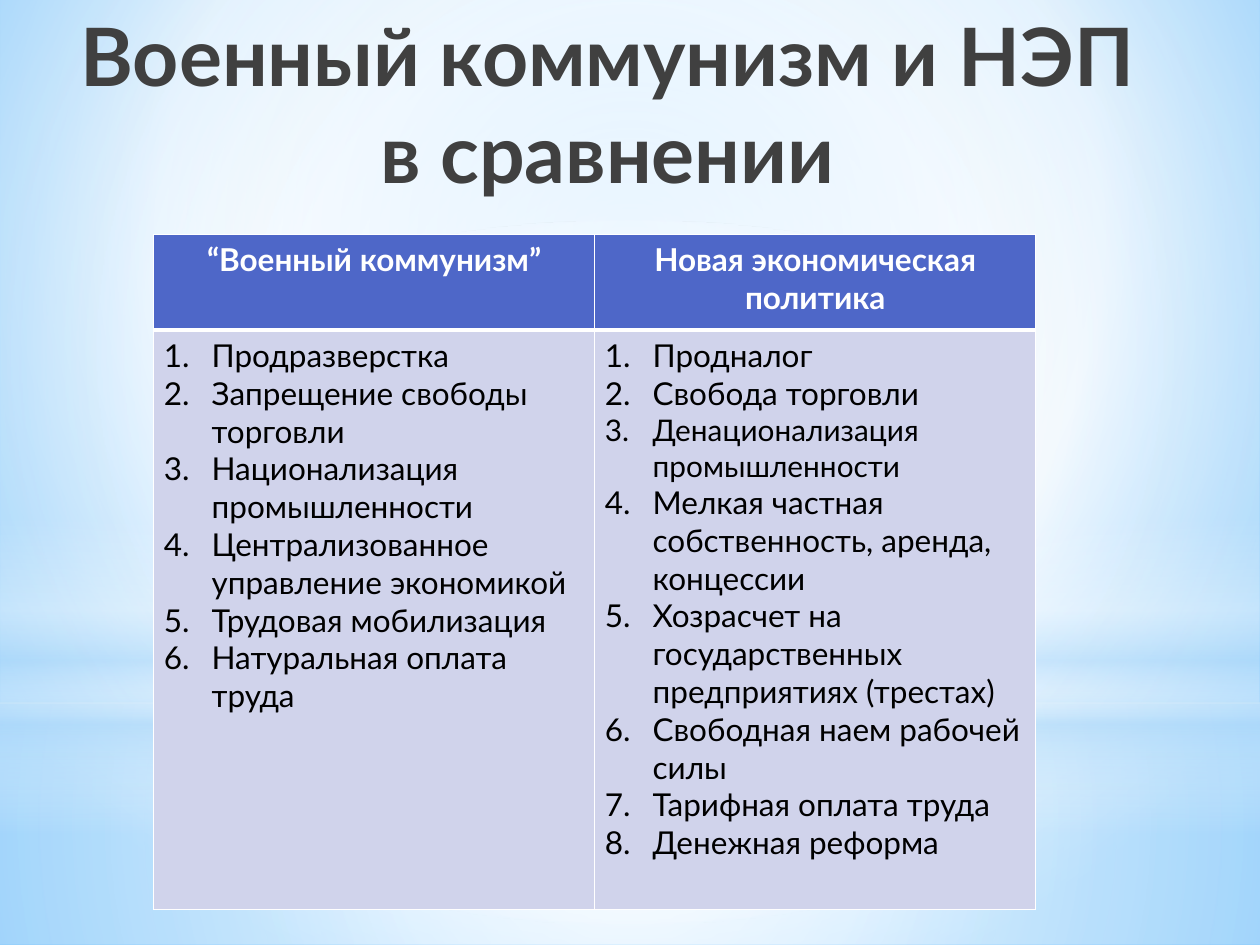
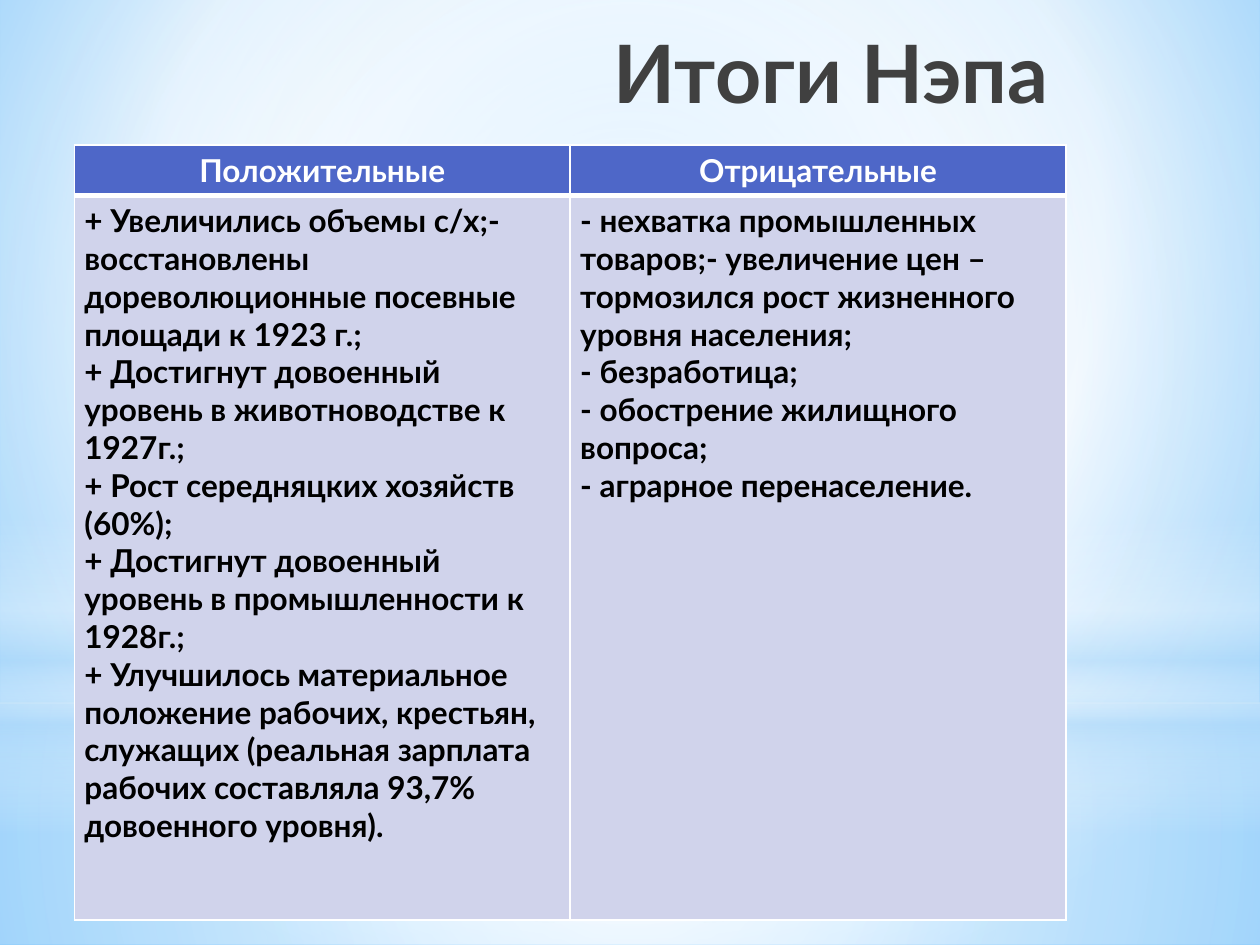
import pptx
import pptx.dml.color
import pptx.enum.shapes
import pptx.enum.text
import pptx.oxml
import pptx.oxml.ns
import pptx.util

Inches = pptx.util.Inches
Pt = pptx.util.Pt
ALIGN = pptx.enum.text.PP_ALIGN
SHAPE = pptx.enum.shapes.MSO_SHAPE
NS = pptx.oxml.ns.nsdecls("a")
qn = pptx.oxml.ns.qn

FONT = "Lato"
WHITE, BLACK, TITLE_GREY = "FFFFFF", "000000", "404040"
HEADER_BLUE, BODY_LILAC, HAZE = "4E67C8", "D0D3EB", "B4DCFA"
TITLE_SIZE, TABLE_SIZE = 46, 18
CENTRE = (50, 50, 50, 50)

# Backdrop layers: preset, (left, top, width, height), (position, colour, opacity) stops, focus
BACKDROP = [
    (SHAPE.RECTANGLE, (0, 5.58, 10, 1.92),
     [(0, WHITE, 91), (37, WHITE, 76), (100, HAZE, 79)], CENTRE),
    (SHAPE.RECTANGLE, (0, 0, 10, 5.58),
     [(0, WHITE, 89), (48, WHITE, 62), (100, HAZE, 79)], CENTRE),
    (SHAPE.RECTANGLE, (0, 4.12, 10, 2.5),
     [(0, WHITE, 0), (29, WHITE, 30), (45, HAZE, 40),
      (55, WHITE, 26), (65, HAZE, 60), (100, WHITE, 0)], None),
    (SHAPE.OVAL, (0, 1.75, 10, 5.58),
     [(0, WHITE, 100), (56, WHITE, 0)], CENTRE),
]
SKY = [(0, "9ED5FF", 100), (60, WHITE, 100), (100, "5BB9FF", 100)]

WAR_COMMUNISM = [
    "Продразверстка",
    "Запрещение свободы торговли",
    "Национализация промышленности",
    "Централизованное управление экономикой",
    "Трудовая мобилизация",
    "Натуральная оплата труда",
]
NEW_POLICY = [
    "Продналог",
    "Свобода торговли",
    "Денационализация промышленности",
    "Мелкая частная собственность, аренда, концессии",
    "Хозрасчет на государственных предприятиях (трестах)",
    "Свободная наем рабочей силы",
    "Тарифная оплата труда",
    "Денежная реформа",
]
GAINS = [
    "+ Увеличились объемы с/х;- восстановлены дореволюционные посевные площади к 1923 г.;",
    "+ Достигнут довоенный уровень в животноводстве к 1927г.;",
    "+ Рост середняцких хозяйств (60%);",
    "+ Достигнут довоенный уровень в промышленности к 1928г.;",
    "+ Улучшилось материальное положение рабочих, крестьян, служащих "
    "(реальная зарплата рабочих составляла 93,7% довоенного уровня).",
]
LOSSES = [
    "- нехватка промышленных товаров;- увеличение цен – тормозился рост "
    "жизненного уровня населения;",
    "- безработица;",
    "- обострение жилищного вопроса;",
    "- аграрное перенаселение.",
]


def rgb(value):
    return pptx.dml.color.RGBColor.from_string(value)


def set_font(paragraph, size, colour, bold):
    font = paragraph.font
    font.name, font.size, font.bold = FONT, Pt(size), bold
    font.color.rgb = rgb(colour)


def set_gradient(properties, stops, focus):
    """Swap the solid fill for a gradient: circular round a focus, else vertical."""
    stop_xml = "".join(
        f'<a:gs pos="{position * 1000}"><a:srgbClr val="{colour}">'
        f'<a:alpha val="{opacity * 1000}"/></a:srgbClr></a:gs>'
        for position, colour, opacity in stops)
    if focus:
        sides = " ".join(f'{side}="{part * 1000}"' for side, part in zip("ltrb", focus))
        direction = f'<a:path path="circle"><a:fillToRect {sides}/></a:path>'
    else:
        direction = '<a:lin ang="5400000" scaled="0"/>'
    gradient = pptx.oxml.parse_xml(
        f'<a:gradFill {NS} rotWithShape="1"><a:gsLst>{stop_xml}</a:gsLst>'
        f"{direction}</a:gradFill>")
    properties.replace(properties.find(qn("a:solidFill")), gradient)


def build_backdrop(layout, slide):
    """Draw the sky layers and place them on the layout, behind its placeholders."""
    layout.background.fill.solid()
    set_gradient(layout.element.find(".//" + qn("p:bgPr")), SKY, (20, 10, 20, 60))
    for order, (preset, place, stops, focus) in enumerate(BACKDROP):
        layer = slide.shapes.add_shape(preset, *map(Inches, place))
        layer.shadow.inherit = False
        layer.line.fill.background()
        layer.fill.solid()
        set_gradient(layer.element.spPr, stops, focus)
        layer.element.nvSpPr.cNvPr.id = 20 + order
        layout.element.cSld.spTree.insert(2 + order, layer.element)


def set_title(slide, lines, place, align):
    title = slide.shapes.title
    title.left, title.top, title.width, title.height = map(Inches, place)
    frame = title.text_frame
    frame.word_wrap = True
    frame.auto_size = pptx.enum.text.MSO_AUTO_SIZE.NONE
    frame.vertical_anchor = pptx.enum.text.MSO_ANCHOR.TOP
    heading = frame.paragraphs[0]
    for number, line in enumerate(lines):
        if number:
            heading.add_line_break()
        heading.add_run().text = line
    heading.alignment = align
    set_font(heading, TITLE_SIZE, TITLE_GREY, True)


def set_borders(cell, top, bottom):
    properties = cell._tc.get_or_add_tcPr()
    for order, (side, width) in enumerate(
            [("L", 1), ("R", 1), ("T", top), ("B", bottom)]):
        properties.insert(order, pptx.oxml.parse_xml(
            f'<a:ln{side} {NS} w="{Pt(width)}"><a:solidFill>'
            f'<a:srgbClr val="{WHITE}"/></a:solidFill></a:ln{side}>'))


def number_paragraph(paragraph):
    properties = paragraph._p.get_or_add_pPr()
    properties.set("marL", str(Inches(0.38)))
    properties.set("indent", str(-Inches(0.38)))
    properties.append(pptx.oxml.parse_xml(
        f'<a:buAutoNum {NS} type="arabicPeriod"/>'))


def fill_cell(cell, lines, fill, colour, bold, align, numbered=False, sizes=None):
    cell.fill.solid()
    cell.fill.fore_color.rgb = rgb(fill)
    cell.margin_left = cell.margin_right = Inches(0.08)
    cell.margin_top = cell.margin_bottom = Inches(0.05)
    cell.text = "\n".join(lines)
    for line, paragraph in zip(lines, cell.text_frame.paragraphs):
        if numbered:
            number_paragraph(paragraph)
        paragraph.alignment = align
        set_font(paragraph, (sizes or {}).get(line, TABLE_SIZE), colour, bold)


def add_comparison(slide, place, header_height, columns, bold, numbered=False, sizes=None):
    """Two-row table: a heading above a list in each column."""
    left, top, width, height = place
    table = slide.shapes.add_table(
        2, len(columns), *map(Inches, place)).table
    table.rows[0].height = Inches(header_height)
    table.rows[1].height = Inches(height - header_height)
    for column, (heading, lines) in enumerate(columns):
        header, body = table.cell(0, column), table.cell(1, column)
        fill_cell(header, [heading], HEADER_BLUE, WHITE, True, ALIGN.CENTER)
        fill_cell(body, lines, BODY_LILAC, BLACK, bold, ALIGN.LEFT, numbered, sizes)
        set_borders(header, 1, 3)
        set_borders(body, 3, 1)


def main():
    deck = pptx.Presentation()
    deck.slide_width, deck.slide_height = Inches(10), Inches(7.5)
    layout = deck.slide_layouts[5]

    # War communism against the new policy
    policies = deck.slides.add_slide(layout)
    build_backdrop(layout, policies)
    set_title(policies, ["Военный коммунизм и НЭП", "в сравнении"],
              (-0.01, 0, 9.66, 1.94), ALIGN.CENTER)
    add_comparison(policies, (1.22, 1.86, 7, 5.36), 0.76,
                   [("“Военный коммунизм”", WAR_COMMUNISM),
                    ("Новая экономическая политика", NEW_POLICY)],
                   bold=False, numbered=True,
                   sizes={"Денационализация промышленности": 17})

    # Results of the new policy
    results = deck.slides.add_slide(layout)
    set_title(results, ["Итоги Нэпа"], (1.3, 0.13, 7.12, 1.25), ALIGN.RIGHT)
    add_comparison(results, (0.59, 1.15, 7.87, 6.15), 0.4,
                   [("Положительные", GAINS), ("Отрицательные", LOSSES)], bold=True)

    deck.save("out.pptx")


if __name__ == "__main__":
    main()
